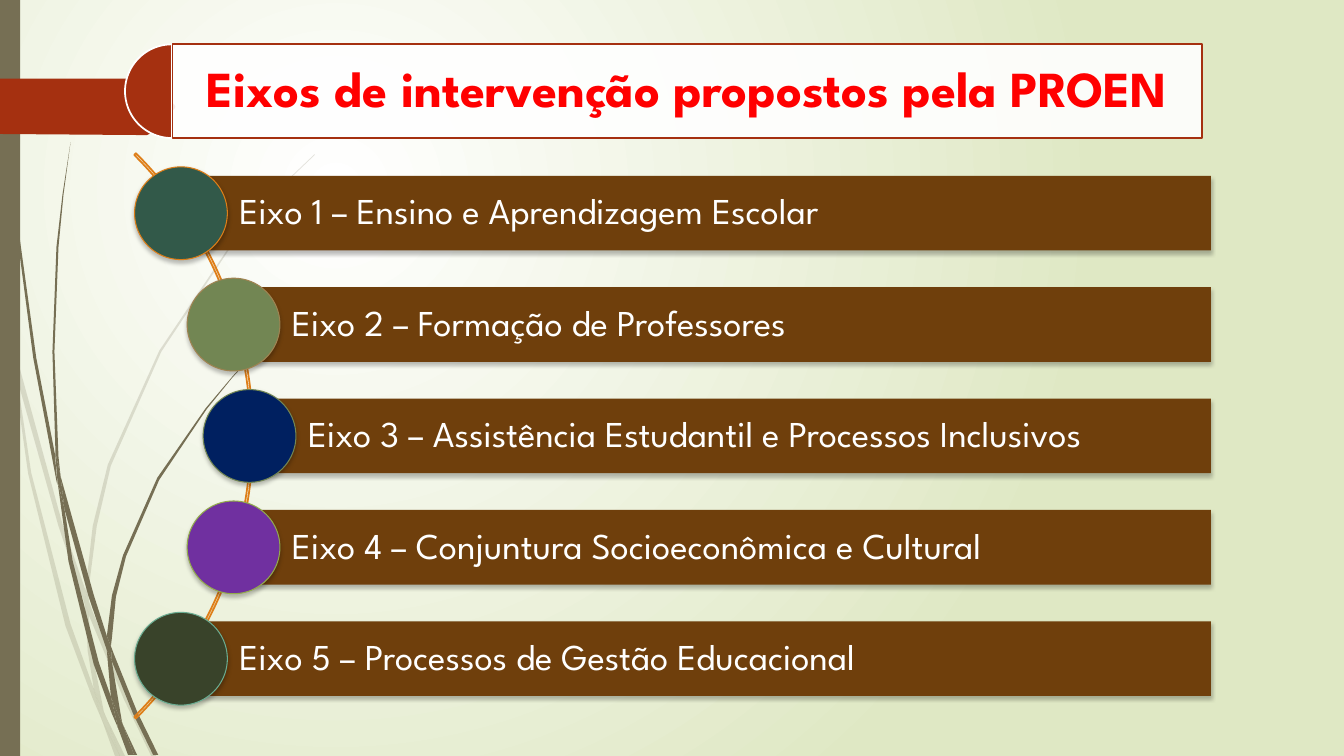
"""Build the slide listing the five PROEN intervention axes along an arc."""
from dataclasses import dataclass
from math import sqrt

from lxml.etree import SubElement
from pptx import Presentation
from pptx.dml.color import RGBColor
from pptx.dml.fill import FillFormat
from pptx.enum.shapes import MSO_SHAPE
from pptx.enum.text import MSO_ANCHOR, PP_ALIGN
from pptx.oxml.ns import qn
from pptx.shapes.autoshape import Shape
from pptx.shapes.shapetree import GroupShapes
from pptx.slide import Slide
from pptx.util import Inches, Pt

FONT = "League Spartan"
WHITE = RGBColor(0xFF, 0xFF, 0xFF)
PALE_GREEN = RGBColor(0xDF, 0xE8, 0xC4)
KHAKI = RGBColor(0x76, 0x6F, 0x54)
BRICK = RGBColor(0xA5, 0x30, 0x10)
RED = RGBColor(0xFF, 0x00, 0x00)
BROWN = RGBColor(0x6F, 0x3F, 0x0C)
ORANGE = RGBColor(0xDE, 0x7E, 0x18)
TEAL = RGBColor(0x32, 0x59, 0x49)
MOSS = RGBColor(0x72, 0x86, 0x53)
TAN = RGBColor(0x9F, 0x83, 0x51)
NAVY = RGBColor(0x00, 0x20, 0x60)
PURPLE = RGBColor(0x70, 0x30, 0xA0)
LIME = RGBColor(0x92, 0xAA, 0x4C)
OLIVE = RGBColor(0x39, 0x43, 0x2A)
MINT = RGBColor(0x6A, 0xAC, 0x91)

Outline = tuple[tuple[float, float], ...]


@dataclass(frozen=True)
class Axis:
    text: str
    fill: RGBColor
    line: RGBColor


AXES = (
    Axis("Eixo 1 – Ensino e Aprendizagem Escolar", TEAL, ORANGE),
    Axis("Eixo 2 – Formação de Professores", MOSS, TAN),
    Axis("Eixo 3 – Assistência Estudantil e Processos Inclusivos", NAVY, MOSS),
    Axis("Eixo 4 – Conjuntura Socioeconômica e Cultural", PURPLE, LIME),
    Axis("Eixo 5 – Processos de Gestão Educacional", OLIVE, MINT),
)
ARC_SIZE = 7.93
ARC_LEFT, ARC_TOP = -5.42, 0.36
ARC_X, ARC_Y = ARC_LEFT + ARC_SIZE / 2, ARC_TOP + ARC_SIZE / 2
DOT_ORBIT = 3.93
ROW_PITCH = 1.105
BAR_RIGHT, BAR_HEIGHT, DOT_SIZE = 12.01, 0.74, 0.92

FAINT_BLADES: tuple[Outline, ...] = (
    ((0.11, 3.5), (0.09, 3.22), (0, 2.82), (0, 2.99), (0.1, 3.44)),
    ((0.58, 5.22), (0.84, 5.99), (0.85, 5.86), (0.62, 5.2), (0.14, 3.45), (0.17, 3.76)),
    ((0.92, 6.07), (0.88, 5.96), (0.88, 6.1), (1.23, 6.94), (1.5, 7.5), (1.55, 7.5), (1.27, 6.92)),
    ((1.19, 7.5), (1.24, 7.5), (1.05, 7.11)),
    ((0.93, 6.83), (0.7, 6.19), (0.31, 4.69), (0.17, 3.76), (0.11, 3.5), (0.28, 4.7),
     (0.65, 6.21), (0.92, 6.93), (1.01, 7.14), (0.99, 7.07)),
    ((0.84, 5.99), (0.87, 6.46), (0.93, 6.83), (0.96, 6.92), (1.05, 7.11), (1.03, 7.06),
     (0.91, 6.46), (0.88, 6.1), (0.88, 6.08)),
    ((0.88, 5.84), (0.96, 5.22), (1.1, 4.62), (1.6, 3.49), (2.29, 2.45), (2.68, 1.98),
     (2.9, 1.75), (3.12, 1.54), (3.12, 1.53), (2.89, 1.75), (2.68, 1.97), (2.28, 2.44),
     (1.58, 3.48), (1.07, 4.61), (0.92, 5.22), (0.85, 5.84), (0.85, 5.86), (0.88, 5.96)),
    ((1.01, 7.14), (1.14, 7.5), (1.19, 7.5)),
    ((0.88, 6.08), (0.88, 6.1), (0.88, 5.96), (0.85, 5.86), (0.84, 5.99)),
    ((0.96, 6.92), (0.93, 6.83), (0.99, 7.07), (1.01, 7.14), (1.19, 7.5), (1.05, 7.11)),
)
DARK_BLADES: tuple[Outline, ...] = (
    ((0.07, 1.1), (0.17, 2.33), (0.33, 3.55), (0.56, 4.77), (0.57, 4.81), (0.55, 4.57),
     (0.55, 4.53), (0.36, 3.55), (0.19, 2.32), (0.08, 1.09), (0.05, 0.48), (0.04, 0),
     (0.03, 0), (0.04, 0.48)),
    ((0.88, 5.92), (1.06, 6.45), (1.06, 6.33), (1.06, 6.31), (0.93, 5.9), (0.6, 4.72), (0.64, 5.05)),
    ((1.13, 6.49), (1.1, 6.41), (1.11, 6.56), (1.32, 7.08), (1.52, 7.49), (1.57, 7.49), (1.36, 7.06)),
    ((1.1, 6.91), (0.98, 6.57), (0.72, 5.56), (0.64, 5.05), (0.57, 4.77), (0.68, 5.57),
     (0.93, 6.59), (1.11, 7.08), (1.17, 7.22), (1.16, 7.17)),
    ((0.6, 4.72), (0.58, 4.53), (0.54, 3.49), (0.58, 2.45), (0.63, 1.93), (0.7, 1.41),
     (0.62, 1.93), (0.56, 2.45), (0.52, 3.49), (0.55, 4.49)),
    ((1.33, 7.49), (1.36, 7.49), (1.22, 7.19)),
    ((0.57, 4.77), (0.64, 5.05), (0.6, 4.72), (0.55, 4.49), (0.55, 4.53)),
    ((1.11, 6.33), (1.15, 5.92), (1.25, 5.52), (1.58, 4.76), (2.05, 4.06), (2.31, 3.74),
     (2.45, 3.59), (2.61, 3.44), (2.6, 3.44), (2.45, 3.58), (2.31, 3.73), (2.04, 4.05),
     (1.56, 4.74), (1.22, 5.51), (1.11, 5.91), (1.06, 6.31), (1.1, 6.41)),
    ((1.17, 7.22), (1.27, 7.49), (1.31, 7.49)),
    ((1.06, 6.45), (1.1, 6.91), (1.16, 7.06), (1.22, 7.19), (1.21, 7.16), (1.11, 6.56), (1.09, 6.51)),
    ((1.06, 6.45), (1.09, 6.51), (1.11, 6.56), (1.1, 6.41), (1.06, 6.31), (1.06, 6.33)),
    ((1.16, 7.06), (1.1, 6.91), (1.16, 7.17), (1.17, 7.22), (1.3, 7.49), (1.33, 7.49), (1.22, 7.19)),
)
RIBBON: Outline = (
    (1.73, 1.08), (1.48, 1.33), (1.46, 1.34), (1.36, 1.34), (0, 1.33), (0, 0.78),
    (1.36, 0.78), (1.46, 0.78), (1.48, 0.79), (1.73, 1.04), (1.74, 1.06),
)


def set_opacity(fill: FillFormat, percent: int) -> None:
    color = fill._xPr.find(qn("a:solidFill"))[0]
    SubElement(color, qn("a:alpha"), val=str(percent * 1000))


def style(shape: Shape, fill: RGBColor | None = None, line: RGBColor | None = None,
          width: float = 1.25, opacity: int = 100) -> Shape:
    shape.shadow.inherit = False
    if fill is None:
        shape.fill.background()
    else:
        shape.fill.solid()
        shape.fill.fore_color.rgb = fill
        if opacity < 100:
            set_opacity(shape.fill, opacity)
    if line is None:
        shape.line.fill.background()
    else:
        shape.line.color.rgb = line
        shape.line.width = Pt(width)
    return shape


def add_preset(shapes: GroupShapes, kind: MSO_SHAPE, left: float, top: float,
               width: float, height: float) -> Shape:
    return shapes.add_shape(kind, Inches(left), Inches(top), Inches(width), Inches(height))


def add_outline(shapes: GroupShapes, outline: Outline, fill: RGBColor, opacity: int = 100) -> None:
    points = [(Inches(x), Inches(y)) for x, y in outline]
    builder = shapes.build_freeform(*points[0])
    builder.add_line_segments(points[1:], close=True)
    style(builder.convert_to_shape(), fill, opacity=opacity)


def drop_shadow(shape: Shape) -> None:
    effects = shape._element.spPr.find(qn("a:effectLst"))
    shadow = SubElement(effects, qn("a:outerShdw"), blurRad=str(Pt(3)), dist=str(Pt(2)),
                        dir="5400000", algn="ctr", rotWithShape="0")
    color = SubElement(shadow, qn("a:srgbClr"), val="000000")
    SubElement(color, qn("a:alpha"), val="25000")


def write(box: Shape, text: str, *, size: float, color: RGBColor, bold: bool = False,
          align: PP_ALIGN = PP_ALIGN.LEFT, left: float = 0.07, inset: float = 0.07) -> None:
    frame = box.text_frame
    frame.word_wrap = True
    frame.vertical_anchor = MSO_ANCHOR.MIDDLE
    frame.margin_left = Inches(left)
    frame.margin_top = frame.margin_right = frame.margin_bottom = Inches(inset)
    para = frame.paragraphs[0]
    para.alignment, para.line_spacing = align, 0.9
    span = para.add_run()
    span.text = text
    span.font.name, span.font.size, span.font.bold = FONT, Pt(size), bold
    span.font.color.rgb = color


def paint_background(page: Slide) -> None:
    fill = page.background.fill
    fill.gradient()
    for stop, color, position in zip(fill.gradient_stops, (WHITE, PALE_GREEN), (0, 1)):
        stop.color.rgb, stop.position = color, position
    gradient = page._element.find(".//" + qn("a:gradFill"))
    gradient.remove(gradient.find(qn("a:lin")))
    circle = SubElement(gradient, qn("a:path"), path="circle")
    SubElement(circle, qn("a:fillToRect"), l="50000", t="50000", r="100000", b="100000")


def add_axes(shapes: GroupShapes) -> None:
    arc = style(add_preset(shapes, MSO_SHAPE.BLOCK_ARC, ARC_LEFT, ARC_TOP, ARC_SIZE, ARC_SIZE), line=ORANGE)
    for index, value in enumerate((189, 27, 0.003)):
        arc.adjustments[index] = value
    for row, axis in enumerate(AXES):
        offset = (row - len(AXES) // 2) * ROW_PITCH
        x, y = ARC_X + sqrt(DOT_ORBIT ** 2 - offset ** 2), ARC_Y + offset
        bar = style(add_preset(shapes, MSO_SHAPE.RECTANGLE, x, y - BAR_HEIGHT / 2, BAR_RIGHT - x, BAR_HEIGHT), BROWN)
        write(bar, axis.text, size=26, color=WHITE, left=0.58)
        dot = add_preset(shapes, MSO_SHAPE.OVAL, x - DOT_SIZE / 2, y - DOT_SIZE / 2, DOT_SIZE, DOT_SIZE)
        style(dot, axis.fill, axis.line, 0.75)
        drop_shadow(bar)
        drop_shadow(dot)


def add_title(shapes: GroupShapes) -> None:
    half_disc = style(add_preset(shapes, MSO_SHAPE.PIE, 1.24, 0.44, 0.93, 0.93), BRICK, WHITE)
    half_disc.adjustments[0], half_disc.adjustments[1] = 54, 162
    banner = style(add_preset(shapes, MSO_SHAPE.RECTANGLE, 1.71, 0.44, 10.21, 0.93), WHITE, BRICK, opacity=90)
    write(banner, "Eixos de intervenção propostos pela PROEN", size=36, color=RED, bold=True,
          align=PP_ALIGN.CENTER, left=0.15, inset=0.15)


def main() -> None:
    deck = Presentation()
    deck.slide_width, deck.slide_height = Inches(13.33), Inches(7.5)
    page = deck.slides.add_slide(deck.slide_layouts[6])
    paint_background(page)
    for blades, opacity in ((FAINT_BLADES, 20), (DARK_BLADES, 100)):
        group = page.shapes.add_group_shape()
        for blade in blades:
            add_outline(group.shapes, blade, KHAKI, opacity)
    style(add_preset(page.shapes, MSO_SHAPE.RECTANGLE, 0, 0, 0.2, 7.5), KHAKI)
    add_outline(page.shapes, RIBBON, BRICK)
    add_axes(page.shapes.add_group_shape().shapes)
    add_title(page.shapes.add_group_shape().shapes)
    deck.save("out.pptx")


if __name__ == "__main__":
    main()
